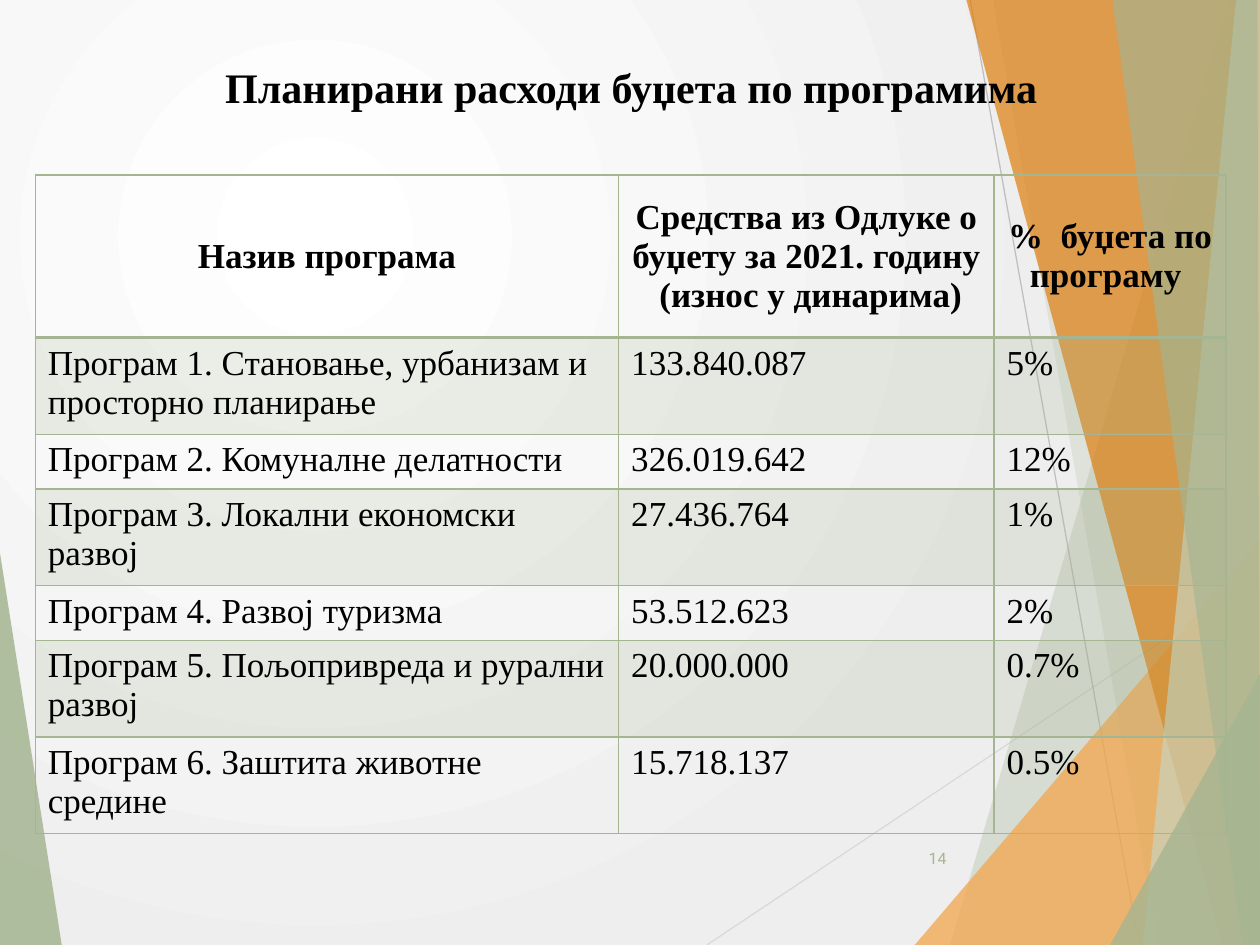
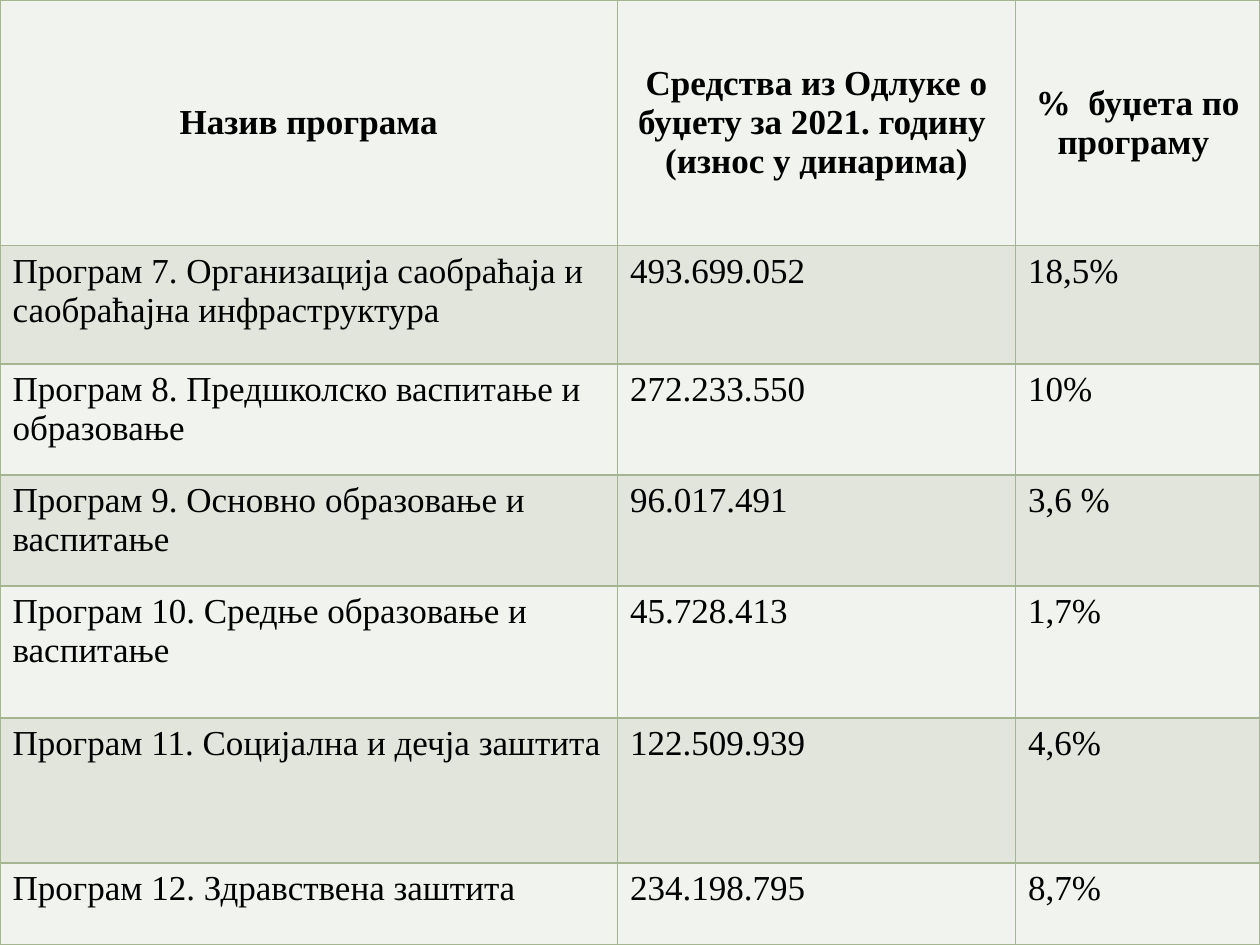
from dataclasses import dataclass

from lxml import etree
from pptx import Presentation
from pptx.dml.color import RGBColor
from pptx.enum import shapes, text
from pptx.oxml import ns, parse_xml
from pptx.util import Inches, Pt


@dataclass(frozen=True)
class Theme:
    sage: str = "A5B592"
    pale_sage: str = "C9D3BE"
    amber: str = "F3A447"
    orange: str = "DD7E0E"
    light_gray: str = "D9D9D9"
    mid_gray: str = "BFBFBF"
    ink: str = "000000"
    row_light: str = "F0F3EE"
    row_dark: str = "E1E5DC"
    back_from: str = "FFFFFF"
    back_to: str = "EEEEEE"
    serif: str = "Times New Roman"
    sans: str = "Roboto"
    title_size: int = 24
    table_size: int = 20
    number_size: int = 9


T = Theme()
W, H = 10, 7.5

# Shared backdrop: colour, opacity in percent, corners in inches
BANDS = [
    (T.sage, 85, [(0, 4.39), (0.49, H), (0, H)]),
    (T.sage, 30, [(9.75, 0), (7.54, H), (W, H), (W, 0)]),
    (T.sage, 20, [(7.88, 0), (9.19, H), (W, H), (W, 0)]),
    (T.amber, 72, [(7.26, H), (W, 4.29), (W, H)]),
    (T.orange, 70, [(7.67, 0), (9.7, H), (W, H), (W, 0)]),
    (T.pale_sage, 70, [(9.81, 0), (9.07, H), (W, H), (W, 0)]),
    (T.sage, 65, [(8.83, 0), (9.86, H), (W, H), (9.98, 0)]),
    (T.sage, 80, [(8.81, H), (W, 5.35), (W, H)]),
]
RAYS = [(T.light_gray, (5.61, H), (W, 4.57)),
        (T.mid_gray, (7.7, 0), (9.04, H))]

# Table content
HEADER = ("Назив програма",
          "Средства из Одлуке о буџету за 2021. годину  (износ у динарима)",
          "%  буџета по програму ")
PROGRAMS_1_TO_6 = [
    ("Програм 1. Становање, урбанизам и просторно планирање", "133.840.087", "5%"),
    ("Програм 2. Комуналне делатности", "326.019.642", "12%"),
    ("Програм 3. Локални економски развој", "27.436.764", "1%"),
    ("Програм 4. Развој туризма", "53.512.623", "2%"),
    ("Програм 5. Пољопривреда и рурални развој", "20.000.000", "0.7%"),
    ("Програм 6. Заштита животне средине", "15.718.137", "0.5%"),
]
PROGRAMS_7_TO_12 = [
    ("Програм 7. Организација саобраћаја и саобраћајна инфраструктура",
     "493.699.052", "18,5%"),
    ("Програм 8. Предшколско васпитање и образовање", "272.233.550", "10%"),
    ("Програм 9. Основно образовање и васпитање", "96.017.491", "3,6 %"),
    ("Програм 10. Средње образовање и васпитање", "45.728.413", "1,7%"),
    ("Програм 11. Социјална и дечја заштита", "122.509.939", "4,6%"),
    ("Програм 12. Здравствена заштита", "234.198.795", "8,7%"),
]


class Deck:
    def __init__(self, theme):
        self.theme = theme
        self.prs = Presentation()
        self.prs.slide_width, self.prs.slide_height = Inches(W), Inches(H)
        self.layout = self.prs.slide_layouts[6]
        self.s = None

    def new_slide(self):
        self.s = self.prs.slides.add_slide(self.layout)

    def fill(self, target, color, opacity=100):
        """Give a shape or a cell a solid fill."""
        target.fill.solid()
        target.fill.fore_color.rgb = RGBColor.from_string(color)
        if opacity < 100:
            owner = target._tc.tcPr if hasattr(target, "_tc") else target.element.spPr
            clr = owner.find(ns.qn("a:solidFill")).find(ns.qn("a:srgbClr"))
            etree.SubElement(clr, ns.qn("a:alpha"), val=str(opacity * 1000))

    def band(self, color, opacity, corners):
        points = [(Inches(x), Inches(y)) for x, y in corners]
        fb = self.s.shapes.build_freeform(*points[0])
        fb.add_line_segments(points[1:], close=True)
        sp = fb.convert_to_shape()
        sp.shadow.inherit = False
        sp.line.fill.background()
        self.fill(sp, color, opacity)
        return sp

    def ray(self, color, start, end):
        ends = [Inches(v) for v in (*start, *end)]
        sp = self.s.shapes.add_connector(shapes.MSO_CONNECTOR.STRAIGHT, *ends)
        sp.line.color.rgb = RGBColor.from_string(color)
        sp.line.width = Pt(0.75)
        etree.SubElement(sp.element.spPr, ns.qn("a:effectLst"))
        return sp

    def backdrop(self):
        """Draw the backdrop, then hand it to the layout for every slide."""
        tree = self.layout.element.cSld.spTree
        for ph in list(self.layout.placeholders):
            tree.remove(ph.element)
        left_band, *right_bands = BANDS
        art = [self.band(*left_band)]
        art += [self.ray(*ray) for ray in RAYS]
        art += [self.band(*band) for band in right_bands]
        for sp in art:
            tree.append(sp.element)

        # Radial gradient centred in the upper left
        fill = self.layout.background.fill
        fill.gradient()
        colors = (self.theme.back_from, self.theme.back_to)
        for stop, color in zip(fill.gradient_stops, colors):
            stop.color.rgb = RGBColor.from_string(color)
        grad = self.layout.element.cSld.find(".//" + ns.qn("a:gradFill"))
        grad.replace(grad.find(ns.qn("a:lin")), parse_xml(
            f'<a:path {ns.nsdecls("a")} path="circle">'
            '<a:fillToRect l="50000" t="50000" r="100000" b="100000"/></a:path>'))

    def add_words(self, tf, words, size, font, color, bold=False, align=None):
        p = tf.paragraphs[0]
        p.alignment = align
        r = p.add_run()
        r.text = words
        r.font.size, r.font.name, r.font.bold = Pt(size), font, bold
        r.font.color.rgb = RGBColor.from_string(color)

    def text_box(self, box, words, anchor, **style):
        sp = self.s.shapes.add_textbox(*map(Inches, box))
        tf = sp.text_frame
        tf.word_wrap = True
        tf.vertical_anchor = anchor
        self.add_words(tf, words, **style)

    def title(self, words):
        t = self.theme
        self.text_box((0.75, 0.44, 8.52, 0.63), words, text.MSO_ANCHOR.TOP,
                      size=t.title_size, font=t.serif, color=t.ink, bold=True,
                      align=text.PP_ALIGN.CENTER)

    def page_number(self, number):
        t = self.theme
        self.text_box((7.05, 6.61, 0.56, 0.4), str(number), text.MSO_ANCHOR.MIDDLE,
                      size=t.number_size, font=t.sans, color=t.sage,
                      align=text.PP_ALIGN.RIGHT)

    def borders(self, cell, widths):
        for i, (side, width) in enumerate(zip("LRTB", widths)):
            cell._tc.tcPr.insert(i, parse_xml(
                f'<a:ln{side} {ns.nsdecls("a")} w="{Pt(width)}"><a:solidFill>'
                f'<a:srgbClr val="{self.theme.sage}"/></a:solidFill></a:ln{side}>'))

    def table(self, left, top, cols, heights, rows, fills, header_rule=1):
        """fills holds (colour, opacity) for even and odd rows; None is clear."""
        t = self.theme
        rows = [HEADER, *rows]
        box = (left, top, sum(cols), sum(heights))
        tbl = self.s.shapes.add_table(len(rows), len(cols), *map(Inches, box)).table
        tbl.first_row = tbl.horz_banding = False
        for col, width in zip(tbl.columns, cols):
            col.width = Inches(width)
        for i, (row, height) in enumerate(zip(tbl.rows, heights)):
            row.height = Inches(height)
            head = i == 0
            for cell, words in zip(row.cells, rows[i]):
                if fills[i % 2]:
                    self.fill(cell, *fills[i % 2])
                else:
                    cell.fill.background()
                self.borders(cell, (1, 1, header_rule if i == 1 else 1,
                                    header_rule if head else 1))
                if head:
                    cell.vertical_anchor = text.MSO_ANCHOR.MIDDLE
                self.add_words(cell.text_frame, words, t.table_size, t.serif, t.ink,
                               head, text.PP_ALIGN.CENTER if head else None)


def main():
    deck = Deck(T)

    # Programs 1 to 6
    deck.new_slide()
    deck.backdrop()
    deck.title("Планирани расходи буџета по програмима")
    deck.page_number(14)
    deck.table(0.28, 1.39, (4.63, 2.98, 1.84),
               (1.29, 0.75, 0.43, 0.71, 0.43, 0.75, 0.71),
               PROGRAMS_1_TO_6, (None, (T.sage, 20)), header_rule=2)

    # Programs 7 to 12, over the full slide
    deck.new_slide()
    deck.table(0, 0, (4.9, 3.16, 1.94),
               (1.95, 0.94, 0.88, 0.88, 1.05, 1.15, 0.65),
               PROGRAMS_7_TO_12, ((T.row_light,), (T.row_dark,)))

    deck.prs.save("out.pptx")


if __name__ == "__main__":
    main()
